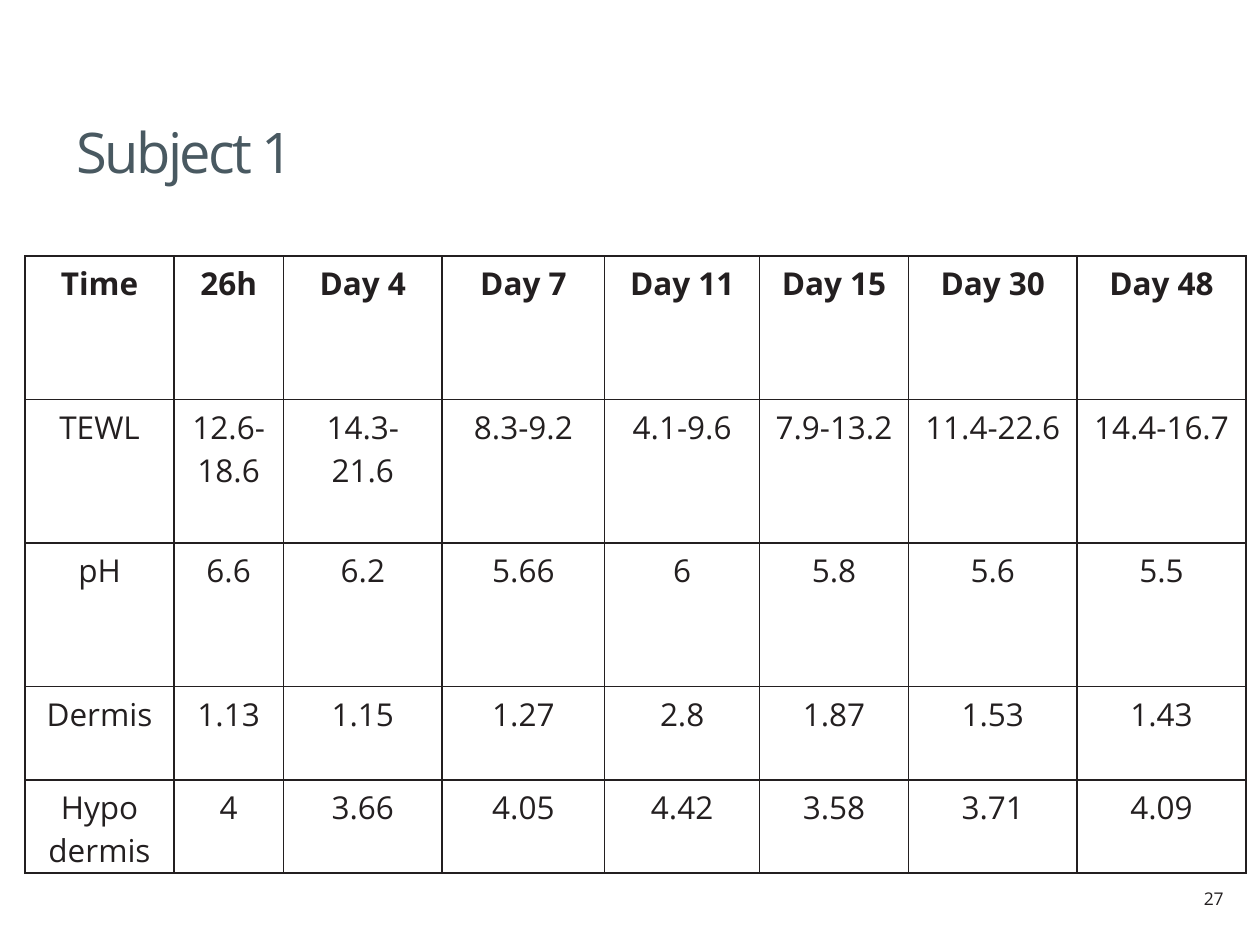
from lxml import etree
from pptx import Presentation
from pptx import util as u
from pptx.dml.color import RGBColor
from pptx.enum import text
from pptx.oxml.ns import qn

# Content
TITLE = "Subject 1"
PAGE_NUMBER = "27"
ROWS = [
    ("Time", "26h", "Day 4", "Day 7", "Day 11", "Day 15", "Day 30", "Day 48"),
    ("TEWL", "12.6-18.6", "14.3-21.6", "8.3-9.2", "4.1-9.6", "7.9-13.2",
     "11.4-22.6", "14.4-16.7"),
    ("pH", "6.6", "6.2", "5.66", "6", "5.8", "5.6", "5.5"),
    ("Dermis", "1.13", "1.15", "1.27", "2.8", "1.87", "1.53", "1.43"),
    ("Hypo\ndermis", "4", "3.66", "4.05", "4.42", "3.58", "3.71", "4.09"),
]

# Layout in inches
WIDTH, HEIGHT = 10, 7.5
COLUMN_WIDTHS = (1.18, 0.87, 1.26, 1.29, 1.23, 1.18, 1.34, 1.34)
ROW_HEIGHTS = (1.14, 1.14, 1.14, 0.74, 0.74)
TABLE_LEFT, TABLE_TOP = 0.2, 2.03

FONT = "Open Sans"
INK = RGBColor(0x23, 0x1F, 0x20)
SLATE = RGBColor(0x49, 0x59, 0x61)


def write(frame, content, size, color, align, bold=False):
    """Fill a text frame, one paragraph per line; return the last run."""
    for index, line in enumerate(content.split("\n")):
        para = frame.add_paragraph() if index else frame.paragraphs[0]
        para.alignment = align
        span = para.add_run()
        span.text = line
        span.font.name = FONT
        span.font.size = u.Pt(size)
        span.font.bold = bold
        span.font.color.rgb = color
    return span


def add_text(page, area, content, size, color, align):
    box = page.shapes.add_textbox(*map(u.Inches, area))
    box.text_frame.word_wrap = True
    return box.text_frame, write(box.text_frame, content, size, color, align)


def draw_borders(cell):
    properties = cell._tc.get_or_add_tcPr()
    for index, side in enumerate(("a:lnL", "a:lnR", "a:lnT", "a:lnB")):
        line = etree.Element(qn(side), w=str(u.Pt(1)))
        fill = etree.SubElement(line, qn("a:solidFill"))
        etree.SubElement(fill, qn("a:srgbClr"), val=str(INK))
        properties.insert(index, line)


def add_table(page):
    area = (TABLE_LEFT, TABLE_TOP, sum(COLUMN_WIDTHS), sum(ROW_HEIGHTS))
    table = page.shapes.add_table(len(ROW_HEIGHTS), len(COLUMN_WIDTHS),
                                  *map(u.Inches, area)).table
    table.horz_banding = False
    for column, width in zip(table.columns, COLUMN_WIDTHS):
        column.width = u.Inches(width)
    for r, (row, height) in enumerate(zip(table.rows, ROW_HEIGHTS)):
        row.height = u.Inches(height)
        for cell, content in zip(row.cells, ROWS[r]):
            cell.fill.background()
            draw_borders(cell)
            write(cell.text_frame, content, 18, INK,
                  text.PP_ALIGN.CENTER, bold=r == 0)


def main():
    deck = Presentation()
    deck.slide_width, deck.slide_height = u.Inches(WIDTH), u.Inches(HEIGHT)
    page = deck.slides.add_slide(deck.slide_layouts[6])

    # Page number
    add_text(page, (9.02, 7, 0.79, 0.27), PAGE_NUMBER, 10, INK,
             text.PP_ALIGN.RIGHT)

    # Title, sitting on the bottom of its box with tight letter spacing
    frame, span = add_text(page, (0.51, 0, 8.9, 1.47), TITLE, 32, SLATE,
                           text.PP_ALIGN.LEFT)
    frame.vertical_anchor = text.MSO_ANCHOR.BOTTOM
    frame.margin_bottom = 0
    span.font._element.set("spc", "-150")

    # Measurements
    add_table(page)
    deck.save("out.pptx")


if __name__ == "__main__":
    main()
